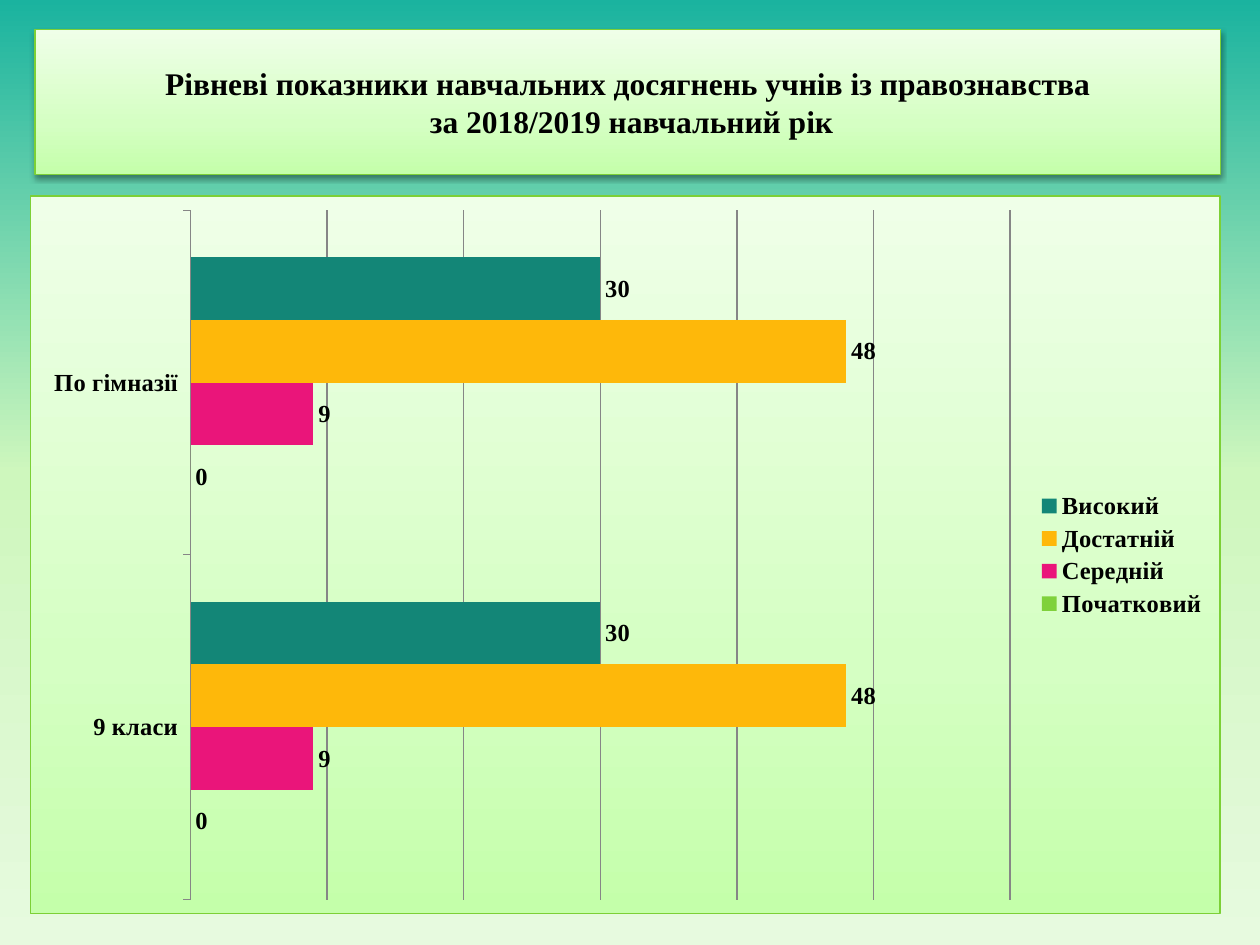
from lxml import etree
from pptx import Presentation
from pptx.chart.data import CategoryChartData
from pptx.dml.color import RGBColor
from pptx.enum.chart import XL_CHART_TYPE as ChartType, XL_LABEL_POSITION as LabelPosition
from pptx.enum.chart import XL_LEGEND_POSITION as LegendPosition, XL_TICK_LABEL_POSITION as TickLabels
from pptx.enum.chart import XL_TICK_MARK as TickMark
from pptx.enum.shapes import MSO_SHAPE as Shape
from pptx.enum.text import MSO_ANCHOR as Anchor, PP_ALIGN as Align
from pptx.oxml import parse_xml
from pptx.oxml.ns import nsdecls, qn
from pptx.util import Pt

COLORS = {
    "text": "000000",
    "border": "7CD036",
    "axis": "868686",
    "Початковий": "7FD13B",
    "Середній": "EA157A",
    "Достатній": "FEB80A",
    "Високий": "138677",
}
PANEL_STOPS = [(0, "C4FFAA"), (35, "D5FFC3"), (100, "EFFFE8")]
BACKGROUND_STOPS = [(0, "1AB39F"), (50, "CEF7BD"), (100, "E7FADF")]
LEVELS = {"Початковий": 0, "Середній": 9, "Достатній": 48, "Високий": 30}
CLASSES = ["9 класи", "По гімназії"]


def gradient_xml(stops, angle):
    stop_list = "".join(
        f'<a:gs pos="{position * 1000}"><a:srgbClr val="{color}"/></a:gs>' for position, color in stops
    )
    return (
        f'<a:gradFill {nsdecls("a")} rotWithShape="1"><a:gsLst>{stop_list}</a:gsLst>'
        f'<a:lin ang="{angle * 60000}" scaled="0"/></a:gradFill>'
    )


def style_font(font, size):
    font.name = "Times New Roman"
    font.size = Pt(size)
    font.bold = True
    font.color.rgb = RGBColor.from_string(COLORS["text"])


presentation = Presentation()
presentation.slide_width = Pt(720)
presentation.slide_height = Pt(540)
slide = presentation.slides.add_slide(presentation.slide_layouts[6])

slide.background.fill.gradient()
background = slide.element.find(".//" + qn("a:gradFill"))
background.getparent().replace(background, parse_xml(gradient_xml(BACKGROUND_STOPS, 90)))

title = slide.shapes.add_shape(Shape.RECTANGLE, Pt(20), Pt(16.8), Pt(677.5), Pt(82.8))
title.fill.gradient()
title_fill = title.element.spPr.find(qn("a:gradFill"))
title_fill.getparent().replace(title_fill, parse_xml(gradient_xml(PANEL_STOPS, 270)))
title.line.color.rgb = RGBColor.from_string(COLORS["border"])
title.line.width = Pt(0.75)
title.shadow.inherit = False
shadow = etree.SubElement(
    title.element.spPr.find(qn("a:effectLst")), qn("a:outerShdw"),
    blurRad=str(Pt(3.1)), dist=str(Pt(1.6)), dir="5400000", rotWithShape="0",
)
shadow_color = etree.SubElement(shadow, qn("a:srgbClr"), val=COLORS["text"])
etree.SubElement(shadow_color, qn("a:alpha"), val="38000")

title.text_frame.word_wrap = True
title.text_frame.vertical_anchor = Anchor.MIDDLE
paragraph = title.text_frame.paragraphs[0]
paragraph.text = "Рівневі показники навчальних досягнень учнів із правознавства\v за 2018/2019 навчальний рік"
paragraph.alignment = Align.CENTER
style_font(paragraph.font, 18)

chart_data = CategoryChartData()
chart_data.categories = CLASSES
for level, value in LEVELS.items():
    chart_data.add_series(level, [value] * len(CLASSES))
chart = slide.shapes.add_chart(
    ChartType.BAR_CLUSTERED, Pt(17), Pt(111.6), Pt(680.5), Pt(411), chart_data
).chart
chart.has_title = False
chart.font.name = "Calibri"
chart.font.size = Pt(10)
chart.font.color.rgb = RGBColor.from_string(COLORS["text"])
chart.element.find(qn("c:chart")).addnext(parse_xml(
    f'<c:spPr {nsdecls("c", "a")}>{gradient_xml(PANEL_STOPS, 270)}'
    f'<a:ln w="{Pt(0.75)}"><a:solidFill><a:srgbClr val="{COLORS["border"]}"/></a:solidFill></a:ln></c:spPr>'
))

chart.has_legend = True
chart.legend.position = LegendPosition.RIGHT
chart.legend.include_in_layout = False
style_font(chart.legend.font, 14)

category_axis = chart.category_axis
category_axis.major_tick_mark = TickMark.OUTSIDE
category_axis.tick_label_position = TickLabels.NEXT_TO_AXIS
style_font(category_axis.tick_labels.font, 14)
value_axis = chart.value_axis
value_axis.minimum_scale = 0
value_axis.maximum_scale = 60
value_axis.major_unit = 10
value_axis.has_major_gridlines = True
value_axis.visible = False
for line in (category_axis.format.line, value_axis.major_gridlines.format.line):
    line.color.rgb = RGBColor.from_string(COLORS["axis"])
    line.width = Pt(0.75)

plot = chart.plots[0]
plot.gap_width = 150
plot.vary_by_categories = False
for series in plot.series:
    series.format.fill.solid()
    series.format.fill.fore_color.rgb = RGBColor.from_string(COLORS[series.name])
    labels = series.data_labels
    labels.show_value = True
    labels.position = LabelPosition.OUTSIDE_END
    style_font(labels.font, 14)

presentation.save("out.pptx")
